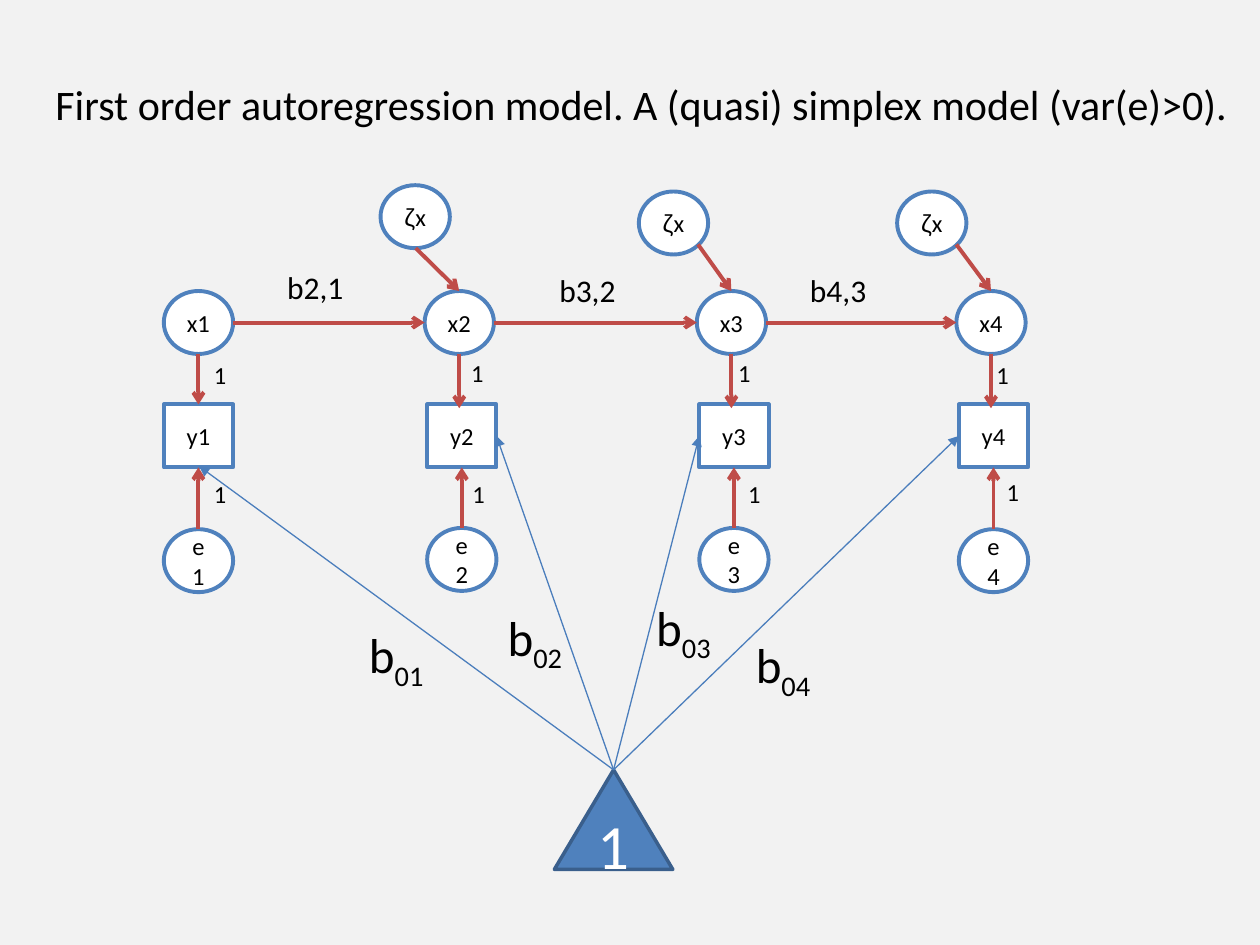
from dataclasses import dataclass
from itertools import pairwise
from typing import Optional

from lxml import etree
from pptx import Presentation
from pptx.dml.color import RGBColor
from pptx.enum.shapes import MSO_CONNECTOR, MSO_SHAPE
from pptx.enum.text import MSO_ANCHOR, MSO_AUTO_SIZE, PP_ALIGN
from pptx.oxml.ns import qn
from pptx.util import Inches, Pt

OVAL, RECTANGLE = MSO_SHAPE.OVAL, MSO_SHAPE.RECTANGLE
TRIANGLE = MSO_SHAPE.ISOSCELES_TRIANGLE
STRAIGHT = MSO_CONNECTOR.STRAIGHT
TOP, MIDDLE = MSO_ANCHOR.TOP, MSO_ANCHOR.MIDDLE
LEFT, CENTER = PP_ALIGN.LEFT, PP_ALIGN.CENTER
NO_AUTOFIT = MSO_AUTO_SIZE.NONE

COLORS = {
    "background": "F2F2F2", "text": "000000", "white": "FFFFFF",
    "outline": "4F81BD", "triangle_outline": "3A5F8C",
    "path": "BF4C48", "mean": "4B7EBC",
}
FONT, GREEK_FONT = "Calibri", "Arial"
NODE_WIDTH, NODE_HEIGHT = 0.55, 0.5
LATENT_TOP, OBSERVED_TOP = 2.31, 3.21
APEX = (4.87, 6.11)

Point = tuple[float, float]


@dataclass
class Run:
    text: str
    font: str = FONT
    subscript: bool = False


@dataclass
class Occasion:
    """One measurement occasion: latent x, observed y, error e."""
    latent_left: float
    observed_left: float
    error_top: float
    loading_tip: float
    loading_label: Point
    error_label: Point
    mean_tip: Point
    mean_label: Point
    disturbance: Optional[Point] = None
    disturbance_exit: Optional[Point] = None  # offset from the oval's corner
    path_label: Optional[Point] = None


OCCASIONS = [
    Occasion(1.3, 1.3, 4.2, 3.21, (1.6, 2.81), (1.6, 3.75),
             (1.58, 3.7), (2.83, 4.91)),
    Occasion(3.37, 3.39, 4.19, 3.24, (3.64, 2.79), (3.65, 3.75),
             (3.94, 3.46), (3.93, 4.77), (3.02, 1.47), (0.28, 0.5), (2.18, 2.08)),
    Occasion(5.53, 5.55, 4.19, 3.24, (5.76, 2.79), (5.84, 3.75),
             (5.55, 3.46), (5.11, 4.69), (5.07, 1.52), (0.47, 0.42), (4.34, 2.1)),
    Occasion(7.59, 7.61, 4.2, 3.24, (7.81, 2.81), (7.89, 3.74),
             (7.61, 3.46), (5.9, 4.99), (7.12, 1.52), (0.47, 0.42), (6.33, 2.1)),
]


def rgb(name: str) -> RGBColor:
    return RGBColor.from_string(COLORS[name])


def write(shape, runs: list[Run], size: float, color="text", align=LEFT) -> None:
    paragraph = shape.text_frame.paragraphs[0]
    paragraph.alignment = align
    for item in runs:
        run = paragraph.add_run()
        run.text = item.text
        run.font.name = item.font
        run.font.size = Pt(size)
        run.font.color.rgb = rgb(color)
        if item.subscript:
            run.font._element.set("baseline", "-25000")


def add_node(slide, kind, corner: Point, runs: list[Run], size=14, width=NODE_WIDTH,
             height=NODE_HEIGHT, fill="white", outline="outline", weight=2.25,
             color="text") -> None:
    shape = slide.shapes.add_shape(kind, *map(Inches, (*corner, width, height)))
    shape.shadow.inherit = False
    shape.fill.solid()
    shape.fill.fore_color.rgb = rgb(fill)
    shape.line.color.rgb = rgb(outline)
    shape.line.width = Pt(weight)
    shape.text_frame.vertical_anchor = MIDDLE
    write(shape, runs, size, color, CENTER)


def add_arrow(slide, start: Point, end: Point, color="path", weight=2.25,
              head="arrow") -> None:
    connector = slide.shapes.add_connector(STRAIGHT, *map(Inches, (*start, *end)))
    connector.line.color.rgb = rgb(color)
    connector.line.width = Pt(weight)
    properties = connector._element.spPr
    etree.SubElement(properties.find(qn("a:ln")), qn("a:tailEnd"), type=head)
    etree.SubElement(properties, qn("a:effectLst"))


def add_label(slide, corner: Point, runs: list[Run], size: float,
              width: float, height: float) -> None:
    box = slide.shapes.add_textbox(*map(Inches, (*corner, width, height)))
    box.text_frame.word_wrap = False
    write(box, runs, size)


def add_title(slide) -> None:
    title = slide.shapes.title
    title.left, title.top, title.width, title.height = map(
        Inches, (0.34, 0.57, 9.58, 0.5))
    title.text_frame.word_wrap = False
    title.text_frame.auto_size = NO_AUTOFIT
    title.text_frame.vertical_anchor = TOP
    write(title, [Run("First order autoregression model. "
                      "A (quasi) simplex model (var(e)>0).")], 24)


def add_occasion(slide, number: int, occasion: Occasion) -> None:
    latent_center = occasion.latent_left + NODE_WIDTH / 2
    observed_center = occasion.observed_left + NODE_WIDTH / 2

    # Latent, observed and error variables
    add_node(slide, OVAL, (occasion.latent_left, LATENT_TOP), [Run(f"x{number}")])
    add_node(slide, RECTANGLE, (occasion.observed_left, OBSERVED_TOP),
             [Run(f"y{number}")])
    add_node(slide, OVAL, (occasion.observed_left, occasion.error_top),
             [Run(f"e{number}")])

    # Fixed loadings
    add_arrow(slide, (latent_center, LATENT_TOP + NODE_HEIGHT),
              (latent_center, occasion.loading_tip))
    add_arrow(slide, (observed_center, occasion.error_top),
              (observed_center, OBSERVED_TOP + NODE_HEIGHT))
    for corner in (occasion.loading_label, occasion.error_label):
        add_label(slide, corner, [Run("1")], 14, 0.3, 0.34)

    # Disturbance of the latent variable
    if occasion.disturbance:
        left, top = occasion.disturbance
        exit_x, exit_y = occasion.disturbance_exit
        add_node(slide, OVAL, (left, top), [Run("ζ", GREEK_FONT), Run("x")])
        add_arrow(slide, (left + exit_x, top + exit_y), (latent_center, LATENT_TOP))


def main() -> None:
    presentation = Presentation()
    presentation.slide_width, presentation.slide_height = Inches(10), Inches(7.5)
    slide = presentation.slides.add_slide(presentation.slide_layouts[5])
    slide.background.fill.solid()
    slide.background.fill.fore_color.rgb = rgb("background")
    add_title(slide)

    for number, occasion in enumerate(OCCASIONS, 1):
        add_occasion(slide, number, occasion)

    # Autoregressive paths
    latent_middle = LATENT_TOP + NODE_HEIGHT / 2
    for number, (before, after) in enumerate(pairwise(OCCASIONS), 1):
        add_arrow(slide, (before.latent_left + NODE_WIDTH, latent_middle),
                  (after.latent_left, latent_middle))
        add_label(slide, after.path_label, [Run(f"b{number + 1},{number}")],
                  18, 0.65, 0.4)

    # Constant and mean structure
    add_node(slide, TRIANGLE, (4.4, 6.11), [Run("1")], 36, 0.94, 0.79,
             "outline", "triangle_outline", 2, "white")
    for number, occasion in enumerate(OCCASIONS, 1):
        add_arrow(slide, APEX, occasion.mean_tip, "mean", 0.75, "triangle")
        add_label(slide, occasion.mean_label,
                  [Run("b"), Run(f"0{number}", subscript=True)], 28, 0.68, 0.57)

    presentation.save("out.pptx")


if __name__ == "__main__":
    main()
